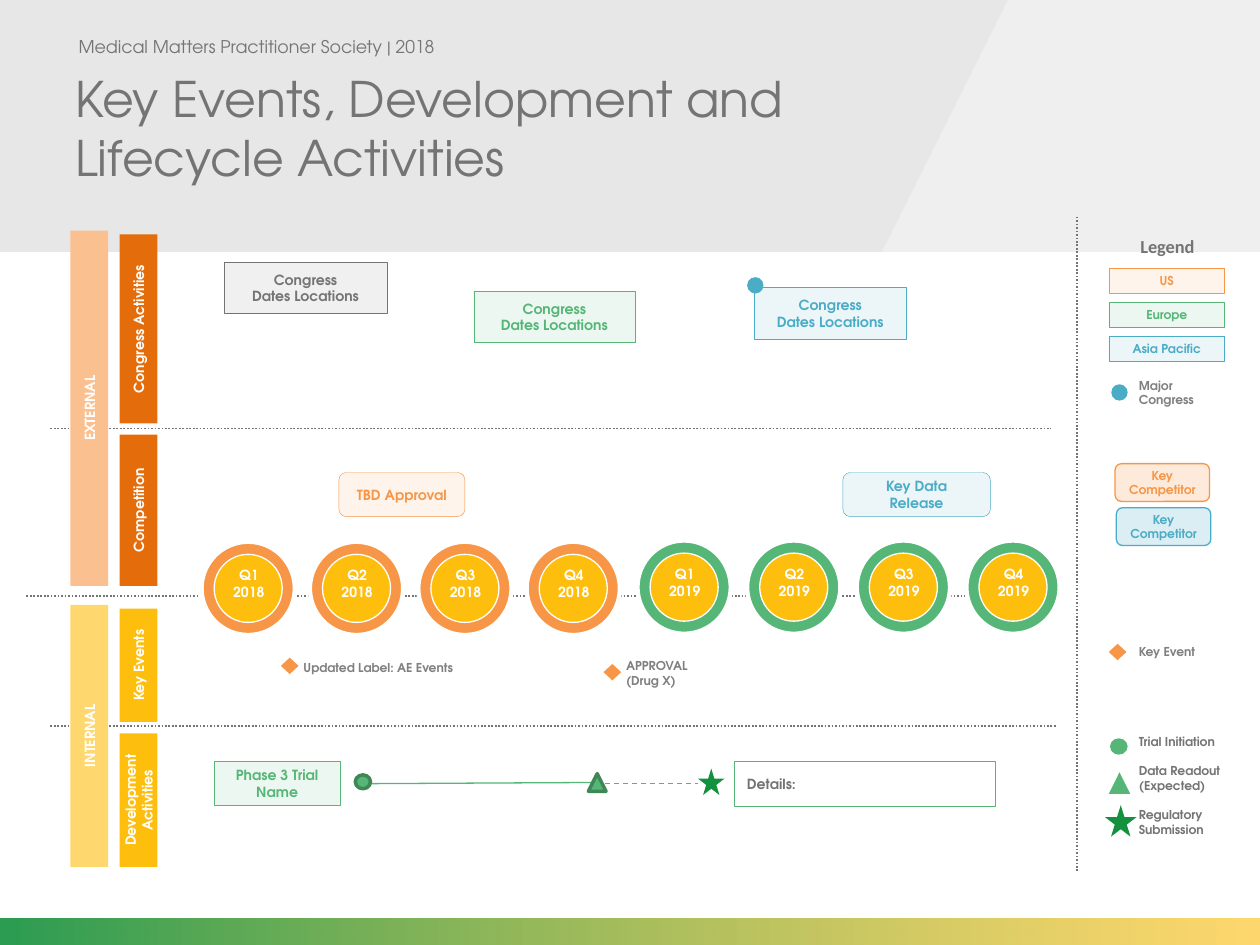
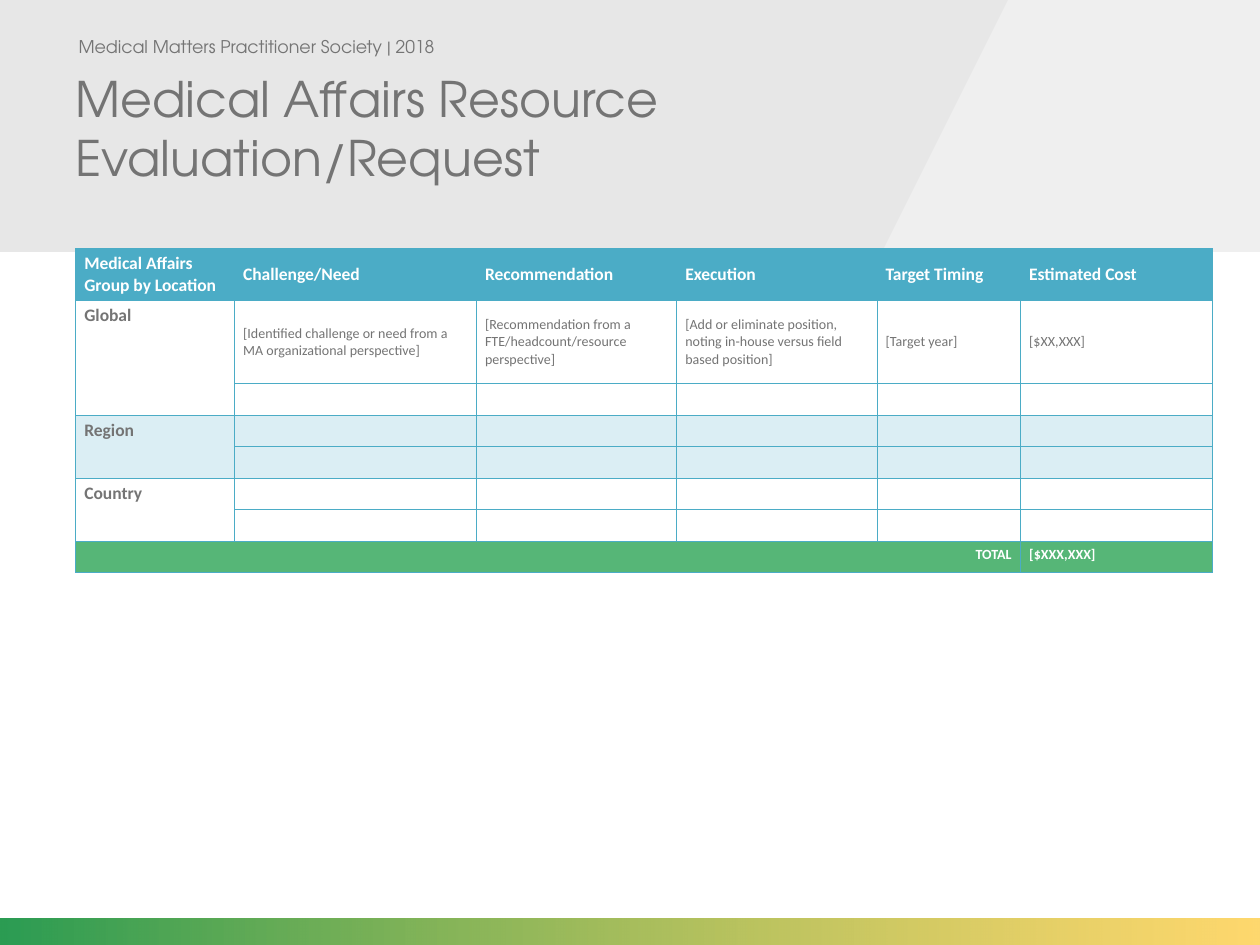
from dataclasses import dataclass
from typing import Any

from lxml import etree
from pptx import Presentation
from pptx.dml.color import RGBColor
from pptx.enum.dml import MSO_LINE
from pptx.enum.shapes import MSO_CONNECTOR, MSO_SHAPE
from pptx.enum.text import MSO_ANCHOR, PP_ALIGN
from pptx.oxml.ns import qn
from pptx.util import Inches, Pt

RECT, ROUND, OVAL = MSO_SHAPE.RECTANGLE, MSO_SHAPE.ROUNDED_RECTANGLE, MSO_SHAPE.OVAL
PEAK, STAR, GEM = MSO_SHAPE.ISOSCELES_TRIANGLE, MSO_SHAPE.STAR_5_POINT, MSO_SHAPE.FLOWCHART_DECISION
STRAIGHT = MSO_CONNECTOR.STRAIGHT
DOT, DASH = MSO_LINE.ROUND_DOT, MSO_LINE.DASH
LEFT, CENTER, RIGHT = PP_ALIGN.LEFT, PP_ALIGN.CENTER, PP_ALIGN.RIGHT
TOP, MIDDLE, BOTTOM = MSO_ANCHOR.TOP, MSO_ANCHOR.MIDDLE, MSO_ANCHOR.BOTTOM

WHITE = RGBColor(0xFF, 0xFF, 0xFF)
GRAY = RGBColor(0x74, 0x74, 0x74)
MIST = RGBColor(0xD9, 0xD9, 0xD9)
PALE = RGBColor(0xF2, 0xF2, 0xF2)
SMOKE = RGBColor(0x80, 0x80, 0x80)
BLUE = RGBColor(0x4B, 0xAC, 0xC6)
ICE = RGBColor(0xDB, 0xEE, 0xF4)
GREEN = RGBColor(0x56, 0xB6, 0x77)
MOSS = RGBColor(0x40, 0x87, 0x58)
LEAF = RGBColor(0x13, 0x91, 0x3F)
ORANGE = RGBColor(0xF7, 0x96, 0x46)
PEACH = RGBColor(0xFA, 0xC0, 0x90)
CREAM = RGBColor(0xFD, 0xEA, 0xDA)
RUST = RGBColor(0xE4, 0x6C, 0x0A)
GOLD = RGBColor(0xFE, 0xBE, 0x0D)
SAND = RGBColor(0xFE, 0xD8, 0x6E)

BRAND = "TeX Gyre Adventor"
PLAIN = "Calibri"
SOCIETY = "Medical Matters Practitioner Society | 2018"


def write(frame, text, color, size=8, font=BRAND, bold=True, align=CENTER):
    looks = {"name": font, "size": Pt(size), "bold": bold}
    for i, part in enumerate(text.split("\n")):
        para = frame.paragraphs[0] if i == 0 else frame.add_paragraph()
        para.alignment = align
        run = para.add_run()
        run.text = part
        for name, value in looks.items():
            setattr(run.font, name, value)
        run.font.color.rgb = color


def fade(shape, *shares):
    for tint, share in zip(shape._element.spPr.iter(qn("a:srgbClr")), shares):
        etree.SubElement(tint, qn("a:alpha"), val=str(share * 1000))


def paint(shape, fill, clear=None, edge=None, width=0.25):
    shape.shadow.inherit = False
    shape.fill.solid()
    shape.fill.fore_color.rgb = fill
    if clear is not None:
        fade(shape, clear)
    if edge is None:
        shape.line.fill.background()
    else:
        shape.line.color.rgb = edge
        shape.line.width = Pt(width)


@dataclass
class Area:
    shapes: Any
    x: float = 0
    y: float = 0

    def frame(self, x, y, w, h):
        return Inches(self.x + x), Inches(self.y + y), Inches(w), Inches(h)

    def add(self, kind, x, y, w, h, fill, **style):
        shape = self.shapes.add_shape(kind, *self.frame(x, y, w, h))
        paint(shape, fill, **style)
        return shape

    def card(self, kind, x, y, w, h, color, text, **looks):
        shape = self.add(kind, x, y, w, h, color, clear=10, edge=color)
        shape.text_frame.word_wrap = True
        write(shape.text_frame, text, color, **looks)

    def note(self, x, y, w, h, text, color=SMOKE, anchor=MIDDLE, **looks):
        frame = self.shapes.add_textbox(*self.frame(x, y, w, h)).text_frame
        frame.word_wrap = True
        frame.vertical_anchor = anchor
        write(frame, text, color, **looks)

    def line(self, x1, y1, x2, y2, color=GRAY, width=1, dash=DOT):
        start, end = self.frame(x1, y1, 0, 0), self.frame(x2, y2, 0, 0)
        rule = self.shapes.add_connector(STRAIGHT, *start[:2], *end[:2])
        rule.line.color.rgb = color
        rule.line.width = Pt(width)
        if dash:
            rule.line.dash_style = dash
        etree.SubElement(rule._element.spPr, qn("a:effectLst"))

    def bar(self, x, y, w, h, fill, text):
        shape = self.add(RECT, x + (w - h) / 2, y + (h - w) / 2, h, w, fill)
        shape.rotation = 270
        shape.text_frame.word_wrap = True
        write(shape.text_frame, text, WHITE)

    def outline(self, points, fill, clear):
        spots = [(self.x + x, self.y + y) for x, y in points]
        path = self.shapes.build_freeform(*spots[0], scale=Inches(1))
        path.add_line_segments(spots[1:])
        paint(path.convert_to_shape(), fill, clear=clear)


def header(area, title):
    area.outline([(0, 0), (10, 0), (10, 1.56), (0, 1.55)], MIST, 62)
    area.outline([(8.36, 0), (10, 0), (10, 1.55), (7.44, 1.56)], PALE, 79)
    area.note(0.48, 0.17, 3.11, 0.4, SOCIETY, GRAY, size=10, bold=False)
    area.note(0.5, 0, 7.5, 1.53, title, GRAY, BOTTOM, size=28, bold=False, align=LEFT)


def footer(area):
    band = area.add(RECT, 0, 0, 10, 0.21, LEAF)
    band.fill.gradient()
    band.fill.gradient_angle = 0
    for stop, color in zip(band.fill.gradient_stops, (LEAF, GOLD)):
        stop.color.rgb = color
    fade(band, 90, 60)


def base(deck, title):
    slide = deck.slides.add_slide(deck.slide_layouts[6])
    header(Area(slide.shapes), title)
    footer(Area(slide.shapes, 0, 7.29))
    return slide.shapes


def rules(area):
    for x1, x2, y in ((0.21, 8.41, 3.01), (0.4, 8.34, 1.68), (0.4, 8.39, 4.04)):
        area.line(x1, y, x2, y)
    area.line(8.55, 0, 8.55, 5.2)


def lanes(area):
    for y, h, fill, text in (
        (0, 2.82, PEACH, "EXTERNAL"),
        (2.97, 2.08, SAND, "INTERNAL"),
    ):
        area.bar(0, y, 0.3, h, fill, text)
    for y, h, fill, text in (
        (0.03, 1.5, RUST, "Congress Activities"),
        (1.62, 1.2, RUST, "Competition"),
        (3, 0.9, GOLD, "Key Events"),
        (3.99, 1.06, GOLD, "Development Activities"),
    ):
        area.bar(0.39, y, 0.3, h, fill, text)


def congress(area):
    for x, y, w, color in ((0, 0, 1.29, GRAY), (1.98, 0.23, 1.28, GREEN), (4.21, 0.2, 1.2, BLUE)):
        area.card(RECT, x, y, w, 0.41, color, "Congress\nDates Locations")
    area.add(OVAL, 4.15, 0.12, 0.13, 0.13, BLUE)


def rivals(area):
    area.card(ROUND, 0, 0, 1, 0.35, ORANGE, "TBD Approval")
    area.card(ROUND, 4, 0, 1.17, 0.35, BLUE, "Key Data Release")


def badge(area, color, text):
    part = Area(area.shapes.add_group_shape().shapes, area.x, area.y)
    part.add(OVAL, 0, 0, 0.74, 0.74, color, edge=WHITE, width=2.5)
    part.add(OVAL, 0.1, 0.1, 0.54, 0.54, GOLD, edge=WHITE, width=0.75)
    part.note(0.12, 0.15, 0.51, 0.37, text, WHITE, TOP)


def quarters(area):
    for year, x, y, step, color in ((2018, 0, 0.01, 0.86, ORANGE), (2019, 3.46, 0, 0.87, GREEN)):
        for i in range(4):
            spot = Area(area.shapes, area.x + x + i * step, area.y + y)
            badge(spot, color, f"Q{i + 1} {year}")


def events(area):
    for x, y, w, text in ((0, 0.09, 1.45, "Updated Label: AE Events"), (2.56, 0.14, 0.92, "APPROVAL (Drug X)")):
        area.add(GEM, x, y, 0.14, 0.13, ORANGE)
        area.note(x + 0.08, y - 0.09, w, 0.33, text, size=7, align=LEFT)


def trial(area):
    area.line(1.19, 0.18, 3.07, 0.17, GREEN, 0.75, None)
    area.line(3.03, 0.18, 3.84, 0.18, GREEN, 0.75, DASH)
    area.card(RECT, 0, 0, 1, 0.35, GREEN, "Phase 3 Trial Name")
    area.add(OVAL, 1.12, 0.11, 0.12, 0.11, GREEN, edge=MOSS, width=2)
    area.add(PEAK, 2.97, 0.1, 0.14, 0.14, GREEN, edge=MOSS, width=2)
    area.add(STAR, 3.84, 0.06, 0.21, 0.21, LEAF)
    box = area.add(RECT, 4.13, 0, 2.07, 0.36, WHITE, clear=10, edge=GREEN)
    write(box.text_frame, "Details:", GRAY, align=LEFT)


def legend(area):
    area.note(0, 0, 1.19, 0.28, "Legend", GRAY, TOP, size=10.5, font=PLAIN)
    zones = (("US", ORANGE), ("Europe", GREEN), ("Asia Pacific", BLUE))
    for i, (text, color) in enumerate(zones):
        area.card(RECT, 0.13, 0.31 + i * 0.27, 0.92, 0.2, color, text, size=7)
    for i, (color, fill) in enumerate(((ORANGE, CREAM), (BLUE, ICE))):
        box = area.add(ROUND, 0.18 + i * 0.01, 1.86 + i * 0.35, 0.75, 0.3, fill, edge=color, width=0.75)
        frame = box.text_frame
        frame.word_wrap = True
        for side in ("left", "right", "top", "bottom"):
            setattr(frame, f"margin_{side}", Inches(0.04))
        write(frame, "Key Competitor", color, size=7)
    for kind, x, y, w, h, fill, top, text, color in (
        (OVAL, 0.15, 1.23, 0.13, 0.13, BLUE, 1.13, "Major Congress", SMOKE),
        (GEM, 0.13, 3.29, 0.14, 0.13, ORANGE, 3.19, "Key Event", SMOKE),
        (OVAL, 0.14, 4.04, 0.14, 0.13, GREEN, 3.9, "Trial Initiation", GRAY),
        (PEAK, 0.13, 4.31, 0.17, 0.17, GREEN, 4.19, "Data Readout (Expected)", GRAY),
        (STAR, 0.1, 4.57, 0.25, 0.25, LEAF, 4.54, "Regulatory Submission", GRAY),
    ):
        area.add(kind, x, y, w, h, fill)
        area.note(0.27, top, 0.92, 0.33, text, color, size=7, align=LEFT)


def border(cell):
    props = cell._tc.get_or_add_tcPr()
    for i, side in enumerate(("lnL", "lnR", "lnT", "lnB")):
        edge = etree.Element(qn(f"a:{side}"), w=str(Pt(0.25)))
        fill = etree.SubElement(edge, qn("a:solidFill"))
        etree.SubElement(fill, qn("a:srgbClr"), val=str(BLUE))
        props.insert(i, edge)


def budget(area):
    wide = (1.26, 1.92, 1.59, 1.59, 1.14, 1.52)
    high = (0.39, 0.66) + (0.25,) * 6
    heads = ("Medical Affairs Group by Location", "Challenge/Need", "Recommendation",
             "Execution", "Target Timing", "Estimated Cost")
    asks = ("[Identified challenge or need from a MA organizational perspective]",
            "[Recommendation from a FTE/headcount/resource perspective]",
            "[Add or eliminate position, noting in-house versus field based position]",
            "[Target year]", "[$XX,XXX]")
    fills = (BLUE, WHITE, WHITE, ICE, ICE, WHITE, WHITE, GREEN)
    place = area.frame(0, 0, sum(wide), sum(high))
    table = area.shapes.add_table(len(high), len(wide), *place).table
    for col, w in zip(table.columns, wide):
        col.width = Inches(w)
    for row, h, fill in zip(table.rows, high, fills):
        row.height = Inches(h)
        for cell in row.cells:
            cell.fill.solid()
            cell.fill.fore_color.rgb = fill
            border(cell)
            cell.margin_left = cell.margin_right = Inches(0.07)
            cell.margin_top = cell.margin_bottom = Inches(0.04)
            cell.text_frame.paragraphs[0]._p.get_or_add_endParaRPr().set("sz", "800")

    def put(row, col, text, color, size, bold=True, align=LEFT, anchor=TOP):
        cell = table.cell(row, col)
        cell.vertical_anchor = anchor
        write(cell.text_frame, text, color, size, PLAIN, bold, align)

    for col, text in enumerate(heads):
        put(0, col, text, WHITE, 10, anchor=MIDDLE)
    for col, text in enumerate(asks, 1):
        put(1, col, text, GRAY, 8, bold=False, anchor=MIDDLE)
    for row, text in zip((1, 3, 5), ("Global", "Region", "Country")):
        table.cell(row, 0).merge(table.cell(row + 1, 0))
        put(row, 0, text, GRAY, 10)
    table.cell(7, 0).merge(table.cell(7, 4))
    put(7, 0, "TOTAL", WHITE, 8, align=RIGHT)
    put(7, 5, "[$XXX,XXX]", WHITE, 8)


def main():
    deck = Presentation()
    deck.slide_width, deck.slide_height = Inches(10), Inches(7.5)
    shapes = base(deck, "Key Events, Development and Lifecycle Activities")
    for draw, x, y in (
        (rules, 0, 1.72), (lanes, 0.56, 1.83), (congress, 1.78, 2.08),
        (rivals, 2.69, 3.75), (quarters, 1.6, 4.29), (events, 2.23, 5.13),
        (trial, 1.7, 6.04), (legend, 8.67, 1.82),
    ):
        draw(Area(shapes, x, y))
    shapes = base(deck, "Medical Affairs Resource Evaluation/Request")
    budget(Area(shapes, 0.6, 1.97))
    deck.save("out.pptx")


if __name__ == "__main__":
    main()
